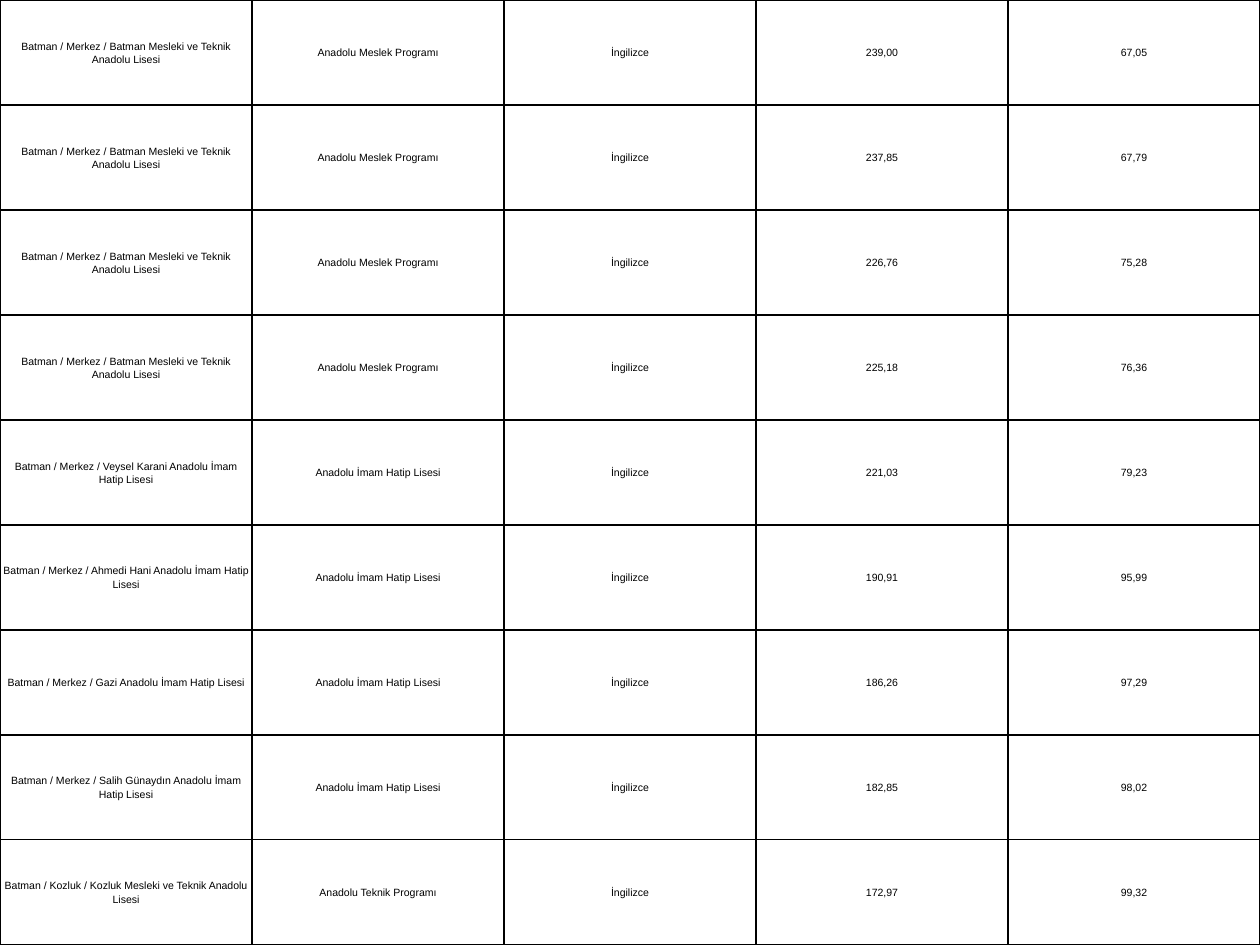
from lxml import etree
from pptx import Presentation
from pptx import util as u
from pptx.dml import color
from pptx.enum import text
from pptx.oxml import ns


def tint(code):
    return color.RGBColor.from_string(code)


class Deck:
    font = "Arial"
    size = 6
    ink = "000000"
    paper = "FFFFFF"
    ground = "EEECE1"
    inset = 0.01
    rule = 1

    def __init__(self, wide, high):
        self.show = Presentation()
        self.show.slide_width = u.Inches(wide)
        self.show.slide_height = u.Inches(high)
        self.slide = self.show.slides.add_slide(self.show.slide_layouts[6])
        back = self.slide.background.fill
        back.solid()
        back.fore_color.rgb = tint(self.ground)

    def table(self, rows, left, top, wide, high):
        frame = self.slide.shapes.add_table(
            len(rows), len(rows[0]),
            u.Inches(left), u.Inches(top), u.Inches(wide), u.Inches(high))
        grid = frame.table
        grid.first_row = grid.horz_banding = False
        for line, row in zip(grid.rows, rows):
            line.height = u.Inches(high / len(rows))
            for cell, words in zip(line.cells, row):
                self.cell(cell, words)

    def cell(self, cell, words):
        cell.margin_left = cell.margin_right = u.Inches(self.inset)
        cell.margin_top = cell.margin_bottom = u.Inches(self.inset)
        cell.vertical_anchor = text.MSO_ANCHOR.MIDDLE
        self.border(cell)
        cell.fill.solid()
        cell.fill.fore_color.rgb = tint(self.paper)
        cell.text_frame.text = words
        para = cell.text_frame.paragraphs[0]
        para.alignment = text.PP_ALIGN.CENTER
        para.line_spacing = 1.15
        for run in para.runs:
            run.font.name = self.font
            run.font.size = u.Pt(self.size)
            run.font.color.rgb = tint(self.ink)

    def border(self, cell):
        props = cell._tc.get_or_add_tcPr()
        for side in "LRTB":
            edge = etree.SubElement(
                props, ns.qn(f"a:ln{side}"), w=str(u.Pt(self.rule)))
            fill = etree.SubElement(edge, ns.qn("a:solidFill"))
            etree.SubElement(fill, ns.qn("a:srgbClr"), val=self.ink)

    def save(self):
        self.show.save("out.pptx")


def main():
    trade = "Anadolu Meslek Programı"
    tech = "Anadolu Teknik Programı"
    imam = "Anadolu İmam Hatip Lisesi"
    batman = "Merkez / Batman Mesleki ve Teknik Anadolu Lisesi"
    schools = [
        (batman, trade, "239,00", "67,05"),
        (batman, trade, "237,85", "67,79"),
        (batman, trade, "226,76", "75,28"),
        (batman, trade, "225,18", "76,36"),
        (f"Merkez / Veysel Karani {imam}", imam, "221,03", "79,23"),
        (f"Merkez / Ahmedi Hani {imam}", imam, "190,91", "95,99"),
        (f"Merkez / Gazi {imam}", imam, "186,26", "97,29"),
        (f"Merkez / Salih Günaydın {imam}", imam, "182,85", "98,02"),
        ("Kozluk / Kozluk Mesleki ve Teknik Anadolu Lisesi", tech,
         "172,97", "99,32"),
    ]
    rows = [(f"Batman / {school}", course, "İngilizce", score, rank)
            for school, course, score, rank in schools]
    deck = Deck(10, 7.5)
    deck.table(rows, 0, 0, 10, 7.5)
    deck.save()


if __name__ == "__main__":
    main()
